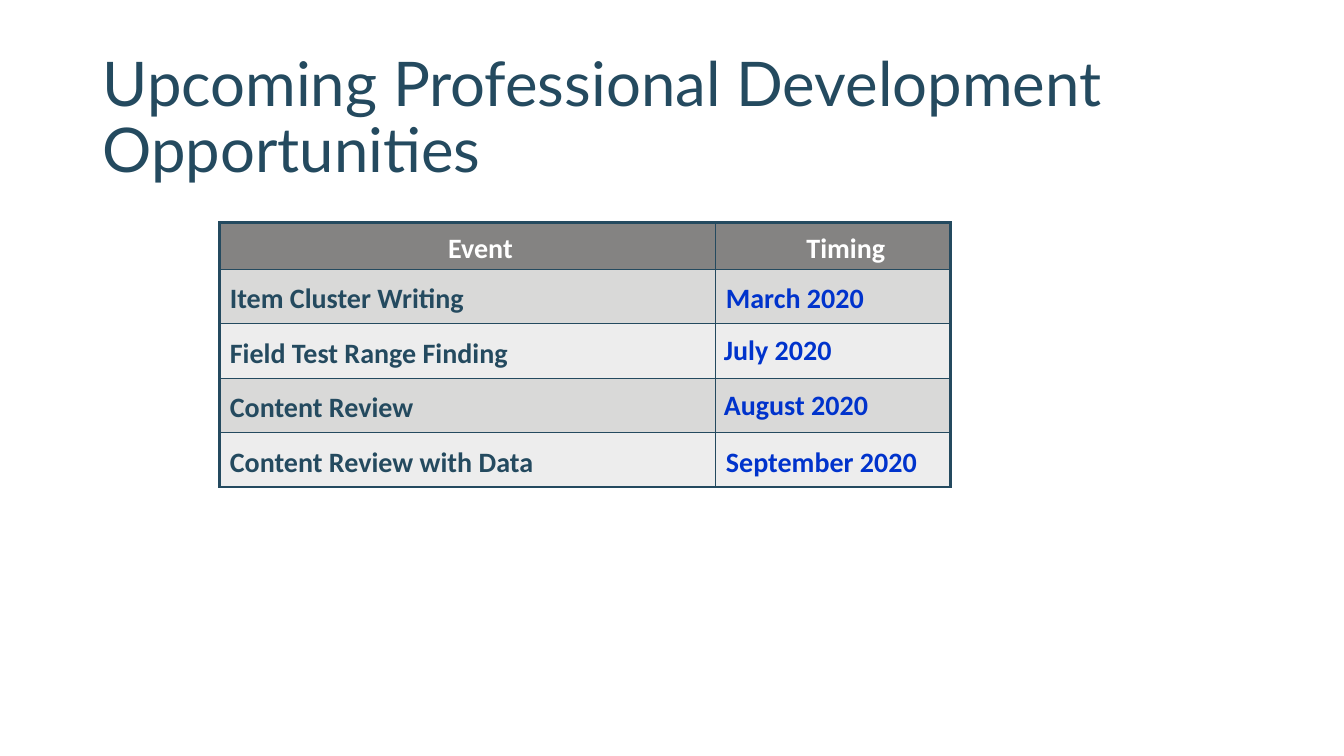
from dataclasses import dataclass

from lxml import etree
from pptx import Presentation
from pptx import util as u
from pptx.dml.color import RGBColor
from pptx.enum import text
from pptx.oxml import ns

PX = 9144  # EMU per px, 100 px to the inch
NAVY, BLUE, WHITE, GRAY = "244A5F", "0033CC", "FFFFFF", "848382"
BANDS = ("D9D9D8", "EDEDED")
COLUMN_WIDTHS = (492, 233)
HEADER_HEIGHT, EVENT_HEIGHT = 46, 54
THIN, THICK = 1, 2.25


@dataclass(frozen=True)
class Event:
    name: str
    timing: str
    timing_indent: int = 2
    timing_spacing: float = 1.15


EVENTS = (
    Event("Item Cluster Writing", "March 2020"),
    Event("Field Test Range Finding", "July 2020", 0, 1.0),
    Event("Content Review", "August 2020", 0, 1.0),
    Event("Content Review with Data", "September 2020"),
)


def px(length: int) -> u.Emu:
    return u.Emu(length * PX)


def rgb(color: str) -> RGBColor:
    return RGBColor.from_string(color)


def write(frame, wording: str, *, font: str = "Calibri", size: int = 20,
          color: str = NAVY, bold: bool = True, spacing: float = 1.15,
          align=text.PP_ALIGN.LEFT, margin: int = 0, indent: int = 0) -> None:
    paragraph = frame.paragraphs[0]
    properties = paragraph._p.get_or_add_pPr()
    properties.set("marL", str(px(margin)))
    properties.set("indent", str(px(indent)))
    paragraph.alignment = align
    paragraph.line_spacing = spacing
    run = paragraph.add_run()
    run.text = wording
    run.font.name = font
    run.font.size = u.Pt(size)
    run.font.bold = bold
    run.font.color.rgb = rgb(color)


def add_border(cell, side: str, points: float) -> None:
    properties = cell._tc.get_or_add_tcPr()
    line = etree.SubElement(properties, ns.qn(f"a:ln{side}"), w=str(u.Pt(points)))
    fill = etree.SubElement(line, ns.qn("a:solidFill"))
    etree.SubElement(fill, ns.qn("a:srgbClr"), val=NAVY)


def style_cell(table, row: int, column: int, fill: str):
    """Give a cell its margins, fill and borders, thick on the table's rim."""
    cell = table.cell(row, column)
    cell.margin_left = cell.margin_right = px(8)
    cell.margin_top = cell.margin_bottom = px(4)
    cell.vertical_anchor = text.MSO_ANCHOR.MIDDLE
    rim = {
        "L": column == 0,
        "R": column == len(COLUMN_WIDTHS) - 1,
        "T": row == 0,
        "B": row == len(EVENTS),
    }
    for side, outer in rim.items():
        add_border(cell, side, THICK if outer else THIN)
    cell.fill.solid()
    cell.fill.fore_color.rgb = rgb(fill)
    return cell.text_frame


def add_title(slide) -> None:
    frame = slide.shapes.add_textbox(px(92), px(46), px(1150), px(145)).text_frame
    frame.word_wrap = True
    frame.vertical_anchor = text.MSO_ANCHOR.MIDDLE
    write(frame, "Upcoming Professional Development Opportunities",
          font="Lato", size=44, bold=False, spacing=0.9)


def add_schedule(slide) -> None:
    height = HEADER_HEIGHT + len(EVENTS) * EVENT_HEIGHT
    table = slide.shapes.add_table(
        len(EVENTS) + 1, len(COLUMN_WIDTHS),
        px(218), px(221), px(sum(COLUMN_WIDTHS)), px(height)).table
    table.first_row = table.horz_banding = False
    for column, width in zip(table.columns, COLUMN_WIDTHS):
        column.width = px(width)
    for number, row in enumerate(table.rows):
        row.height = px(EVENT_HEIGHT if number else HEADER_HEIGHT)

    for column, heading in enumerate(("Event", "Timing")):
        write(style_cell(table, 0, column, GRAY), heading, color=WHITE,
              align=text.PP_ALIGN.CENTER, margin=50, indent=-25)
    for row, event in enumerate(EVENTS, start=1):
        band = BANDS[(row - 1) % len(BANDS)]
        write(style_cell(table, row, 0, band), event.name, margin=2)
        write(style_cell(table, row, 1, band), event.timing, color=BLUE,
              margin=event.timing_indent, spacing=event.timing_spacing)


def main() -> None:
    deck = Presentation()
    deck.slide_width, deck.slide_height = px(1333), px(750)
    slide = deck.slides.add_slide(deck.slide_layouts[6])
    add_title(slide)
    add_schedule(slide)
    deck.save("out.pptx")


if __name__ == "__main__":
    main()
